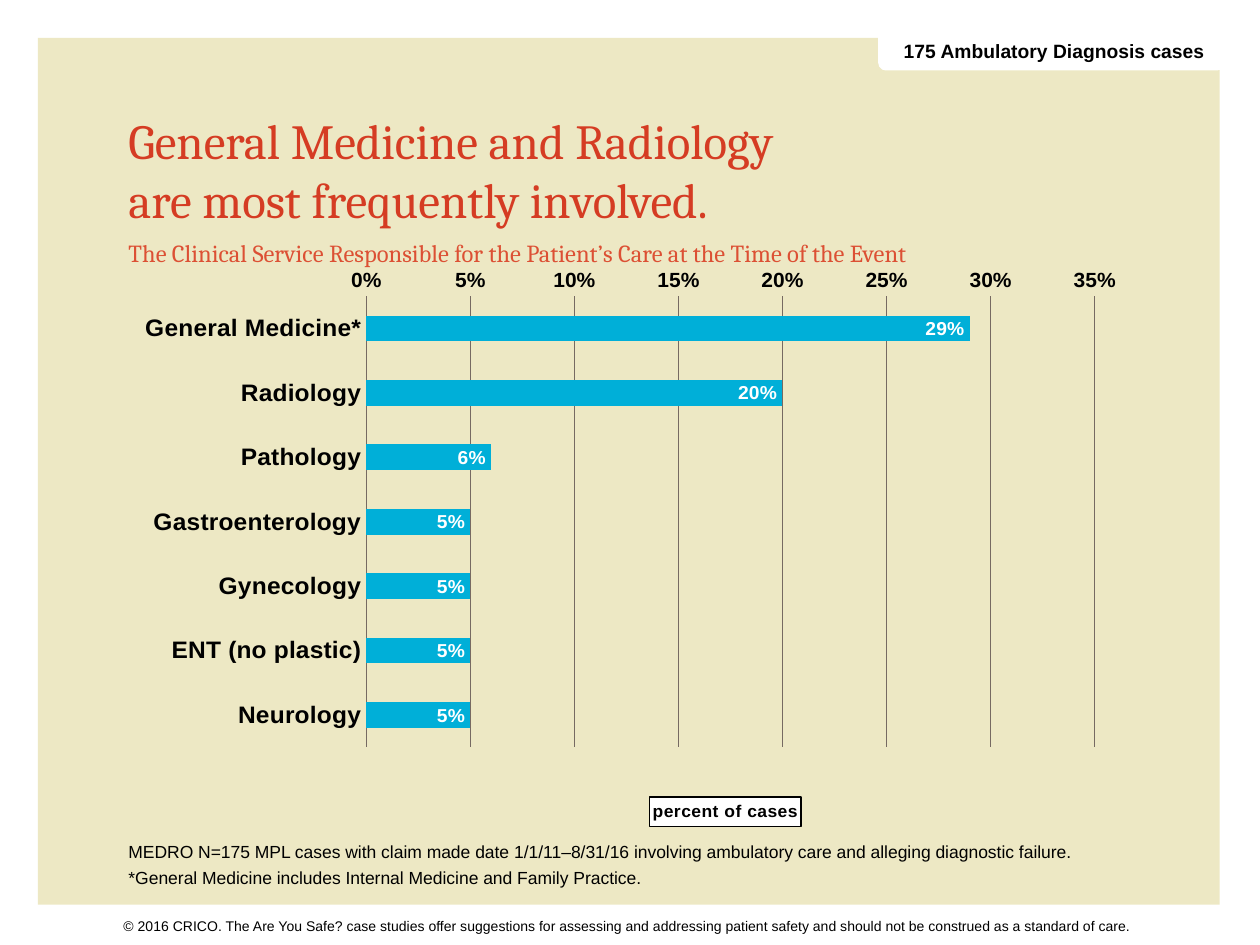
from lxml.etree import SubElement
from pptx import Presentation
from pptx.chart.data import CategoryChartData
from pptx.dml.color import RGBColor
from pptx.enum.chart import XL_AXIS_CROSSES as Crosses, XL_CHART_TYPE as ChartType
from pptx.enum.chart import XL_LABEL_POSITION as LabelPosition, XL_TICK_MARK as Tick
from pptx.enum.shapes import MSO_SHAPE as Shape
from pptx.enum.text import MSO_ANCHOR as Anchor, PP_ALIGN as Align
from pptx.oxml import parse_xml
from pptx.oxml.ns import nsdecls, qn
from pptx.util import Inches, Pt

COLORS = {"panel": "EDE8C4", "title": "D53C23", "subtitle": "DC5034", "bar": "00AFD8",
          "grid": "766A62", "black": "000000", "white": "FFFFFF"}
LEFT, WIDTH = 0.98, 8.03
SERVICES = {"General Medicine*": 0.29, "Radiology": 0.2, "Pathology": 0.06,
            "Gastroenterology": 0.05, "Gynecology": 0.05, "ENT (no plastic)": 0.05,
            "Neurology": 0.05}


def rgb(name):
    return RGBColor.from_string(COLORS[name])


def style_font(font, size, color="black", bold=False, name="Arial"):
    font.size = Pt(size)
    font.bold = bold
    font.name = name
    font.color.rgb = rgb(color)


def write_text(box, text, size, color="black", bold=False, name="Arial",
               anchor=Anchor.TOP, align=Align.LEFT, insets=(0.04, 0.04), after=0):
    frame = box.text_frame
    frame.word_wrap = True
    frame.vertical_anchor = anchor
    frame.margin_left = frame.margin_right = Inches(insets[0])
    frame.margin_top = frame.margin_bottom = Inches(insets[1])
    frame.text = text
    for para in frame.paragraphs:
        para.alignment = align
        para.space_after = Pt(after)
        style_font(para.font, size, color, bold, name)


def add_text(page, top, height, text, size, width=WIDTH, **style):
    box = page.shapes.add_textbox(Inches(LEFT), Inches(top), Inches(width), Inches(height))
    write_text(box, text, size, **style)


def add_block(page, kind, left, top, width, height, color):
    block = page.shapes.add_shape(kind, Inches(left), Inches(top), Inches(width), Inches(height))
    block.shadow.inherit = False
    block.fill.solid()
    block.fill.fore_color.rgb = rgb(color)
    block.line.fill.background()
    return block


def set_layout(parent, values, inner=False):
    for old in parent.findall(qn("c:layout")):
        parent.remove(old)
    layout = parse_xml(f"<c:layout {nsdecls('c')}/>")
    manual = SubElement(layout, qn("c:manualLayout"))
    if inner:
        SubElement(manual, qn("c:layoutTarget"), val="inner")
    for mode in ("xMode", "yMode"):
        SubElement(manual, qn(f"c:{mode}"), val="edge")
    for key, value in values.items():
        SubElement(manual, qn(f"c:{key}"), val=str(value))
    parent.insert(1 if parent.find(qn("c:tx")) is not None else 0, layout)


def style_axis(axis, size):
    axis.major_tick_mark = axis.minor_tick_mark = Tick.NONE
    axis.format.line.fill.background()
    style_font(axis.tick_labels.font, size, bold=True)


def add_axis_title(axis, text):
    title = axis.axis_title
    title.text_frame.text = text
    span = title.text_frame.paragraphs[0].runs[0]
    style_font(span.font, 10, bold=True)
    span.font._element.set("spc", "40")
    title.format.fill.solid()
    title.format.fill.fore_color.rgb = rgb("white")
    title.format.line.color.rgb = rgb("black")
    title.format.line.width = Pt(0.75)
    set_layout(title._element, {"x": 0.52, "y": 0.93})


def add_service_chart(page):
    data = CategoryChartData(number_format="0%")
    data.categories = list(SERVICES)
    data.add_series("Series 1", list(SERVICES.values()))
    chart = page.shapes.add_chart(ChartType.BAR_CLUSTERED, Inches(LEFT), Inches(2.14),
                                  Inches(WIDTH), Inches(4.49), data).chart
    chart.has_legend = chart.has_title = False
    style_font(chart.font, 18)

    services = chart.category_axis
    style_axis(services, 14)
    services.reverse_order = True
    services.crosses = Crosses.MAXIMUM

    percent = chart.value_axis
    style_axis(percent, 12)
    percent.minimum_scale, percent.maximum_scale, percent.major_unit = 0, 0.35, 0.05
    percent.tick_labels.number_format = "0%"
    percent.tick_labels.number_format_is_linked = False
    percent.major_gridlines.format.line.color.rgb = rgb("grid")
    percent.major_gridlines.format.line.width = Pt(0.75)
    add_axis_title(percent, "percent of cases")

    plot = chart.plots[0]
    plot.gap_width = 150
    plot.vary_by_categories = False
    bars = plot.series[0]
    bars.format.fill.solid()
    bars.format.fill.fore_color.rgb = rgb("bar")
    labels = bars.data_labels
    labels.show_value = True
    labels.position = LabelPosition.INSIDE_END
    labels.number_format = "0%"
    labels.number_format_is_linked = False
    style_font(labels.font, 11, "white", bold=True)
    set_layout(chart._chartSpace.chart.plotArea,
               {"x": 0.24, "y": 0.02, "w": 0.72, "h": 0.82}, inner=True)


def main():
    deck = Presentation()
    deck.slide_width, deck.slide_height = Inches(10), Inches(7.5)
    page = deck.slides.add_slide(deck.slide_layouts[6])

    add_block(page, Shape.RECTANGLE, 0.3, 0.3, 9.38, 6.88, "panel")
    add_text(page, 1.16, 0.69, "General Medicine and Radiology \vare most frequently involved.",
             28, color="title", name="Cambria", anchor=Anchor.BOTTOM)
    add_service_chart(page)
    add_text(page, 1.85, 0.43,
             "The Clinical Service Responsible for the Patient’s Care at the Time of the Event",
             14, color="subtitle", name="Cambria", after=3)
    add_text(page, 6.82, 0.27,
             "MEDRO N=175 MPL cases with claim made date 1/1/11–8/31/16 involving ambulatory care "
             "and alleging diagnostic failure.\n"
             "*General Medicine includes Internal Medicine and Family Practice.",
             10, anchor=Anchor.BOTTOM, after=3)
    tag = add_block(page, Shape.ROUNDED_RECTANGLE, 6.97, 0.2, 2.75, 0.36, "white")
    write_text(tag, "175 Ambulatory Diagnosis cases ", 11, bold=True,
               anchor=Anchor.BOTTOM, align=Align.RIGHT, insets=(0.1, 0.05))
    add_text(page, 7.23, 0.27,
             "© 2016 CRICO. The Are You Safe? case studies offer suggestions for assessing and "
             "addressing patient safety and should not be construed as a standard of care.",
             8, width=8.49, insets=(0, 0.05))
    deck.save("out.pptx")


if __name__ == "__main__":
    main()
